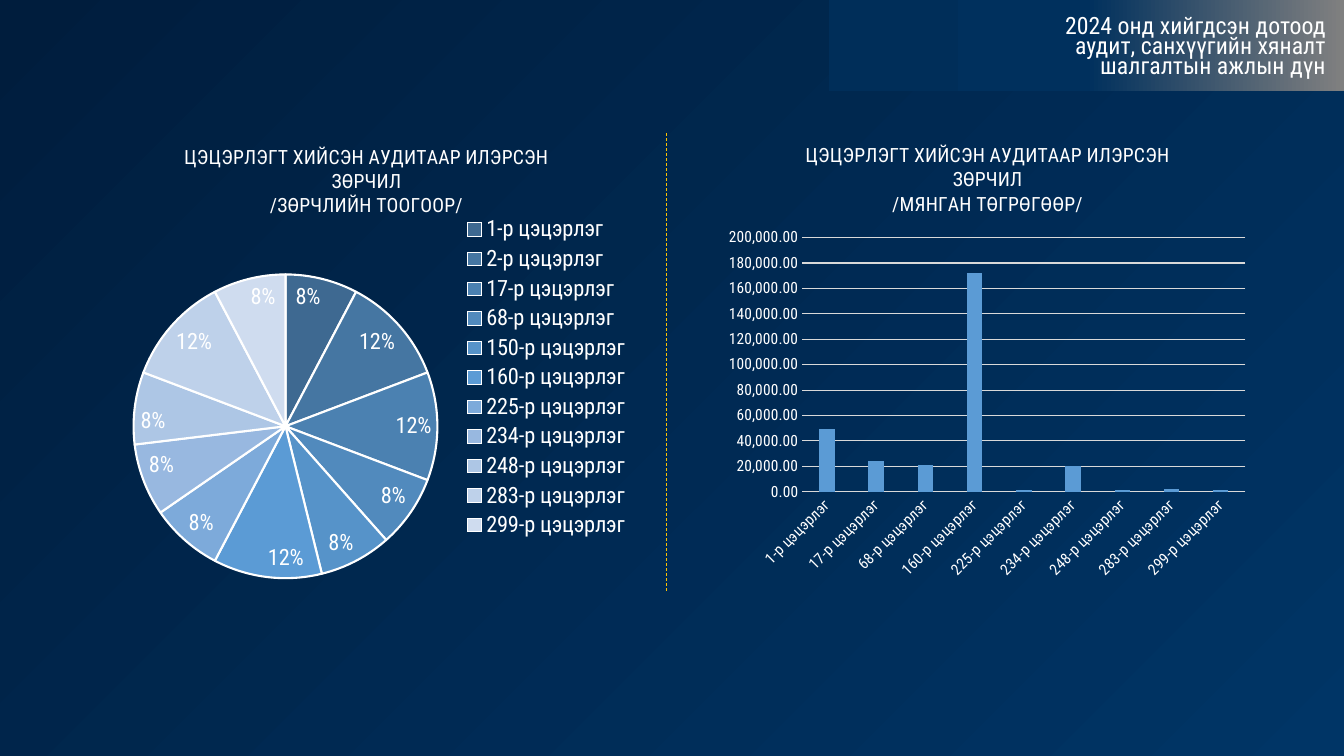
"""Builds the slide on the 2024 internal audit results for kindergartens."""
from lxml import etree
from pptx import Presentation
from pptx.chart.data import CategoryChartData
from pptx.dml.color import RGBColor
from pptx.enum.chart import XL_CHART_TYPE as ChartType
from pptx.enum.chart import XL_LABEL_POSITION as LabelPosition
from pptx.enum.chart import XL_LEGEND_POSITION as LegendPosition
from pptx.enum.chart import XL_TICK_MARK as TickMark
from pptx.enum.dml import MSO_LINE as LineStyle
from pptx.enum.shapes import MSO_CONNECTOR as Connector
from pptx.enum.shapes import MSO_SHAPE as Shape
from pptx.enum.text import MSO_ANCHOR as Anchor
from pptx.enum.text import MSO_AUTO_SIZE as AutoSize
from pptx.enum.text import PP_ALIGN as Align
from pptx.oxml import parse_xml
from pptx.oxml.ns import nsdecls, qn
from pptx.util import Inches, Pt

FONT = "Roboto Condensed"
WHITE = RGBColor(0xFF, 0xFF, 0xFF)
GOLD = RGBColor(0xFF, 0xC3, 0x00)
GRID = RGBColor(0xD9, 0xD9, 0xD9)
BLUE = RGBColor(0x5B, 0x9B, 0xD5)
SLICE_COLOURS = [RGBColor.from_string(value) for value in (
    "3E6991", "4576A2", "4B81B1", "518ABD", "5693C9", "5B9BD5",
    "7DAADA", "98B8E0", "ADC6E5", "BED1EA", "CFDCEF")]


def style_font(font, size):
    font.name = FONT
    font.size = Pt(size)
    font.bold = False
    font.color.rgb = WHITE


def place_part(element, index, inner, **fractions):
    for old_layout in element.findall(qn("c:layout")):
        element.remove(old_layout)
    target = '<c:layoutTarget val="inner"/>' if inner else ""
    modes = "".join(f'<c:{key}Mode val="edge"/>' for key in "xy")
    sizes = "".join(f'<c:{key} val="{value}"/>' for key, value in fractions.items())
    element.insert(index, parse_xml(
        f'<c:layout {nsdecls("c")}><c:manualLayout>{target}{modes}{sizes}'
        '</c:manualLayout></c:layout>'))


presentation = Presentation()
presentation.slide_width = Inches(13.33)
presentation.slide_height = Inches(7.5)
slide = presentation.slides.add_slide(presentation.slide_layouts[5])

RADIAL = ('<a:path path="circle"><a:fillToRect l="100000" t="100000"/></a:path>')
LINEAR = '<a:lin ang="0" scaled="0"/>'
panels = [
    ((0, 0, 13.33, 7.58), [(0, "003566"), (100, "001D3D")], RADIAL),
    ((8.22, 0, 5.11, 0.9), [(0, "002E59"), (50, "00305D"), (100, "808080")], LINEAR),
]
for box, stops, direction in panels:
    panel = slide.shapes.add_shape(Shape.RECTANGLE, *map(Inches, box))
    panel.shadow.inherit = False
    panel.line.fill.background()
    stop_xml = "".join(
        f'<a:gs pos="{position * 1000}"><a:srgbClr val="{colour}"/></a:gs>'
        for position, colour in stops)
    geometry = panel._element.spPr.find(qn("a:prstGeom"))
    geometry.addnext(parse_xml(
        f'<a:gradFill {nsdecls("a")} rotWithShape="1"><a:gsLst>{stop_xml}</a:gsLst>'
        f'{direction}</a:gradFill>'))

divider = slide.shapes.add_connector(
    Connector.STRAIGHT, Inches(6.61), Inches(5.86), Inches(6.61), Inches(1.3))
divider.line.color.rgb = GOLD
divider.line.width = Pt(0.5)
divider.line.dash_style = LineStyle.DASH
etree.SubElement(divider._element.spPr, qn("a:effectLst"))

violations = {1: 8, 2: 12, 17: 12, 68: 8, 150: 8, 160: 12,
              225: 8, 234: 8, 248: 8, 283: 12, 299: 8}
amounts = {1: 49000, 17: 24000, 68: 21000, 160: 172000, 225: 1000,
           234: 20000, 248: 1000, 283: 2000, 299: 1000}
chart_specs = [
    (ChartType.PIE, (0.87, 1.19, 5.45, 5.11), violations, "/ЗӨРЧЛИЙН ТООГООР/",
     {"x": 0.17, "y": 0.04}, {"x": 0.08, "y": 0.3, "w": 0.56, "h": 0.59}),
    (ChartType.COLUMN_CLUSTERED, (7.1, 1.19, 5.36, 4.67), amounts, "/МЯНГАН ТӨГРӨГӨӨР/",
     {"x": 0.16, "y": 0.04}, {"x": 0.16, "y": 0.25, "w": 0.82, "h": 0.54}),
]
charts = []
for kind, box, values, measure, title_place, plot_place in chart_specs:
    data = CategoryChartData(number_format="#,##0.00")
    data.categories = [f"{number}-р цэцэрлэг" for number in values]
    data.add_series("Series 1", list(values.values()))
    chart = slide.shapes.add_chart(kind, *map(Inches, box), data).chart
    style_font(chart.font, 11)
    chart.has_legend = False
    chart.has_title = True
    title_frame = chart.chart_title.text_frame
    lines = ["ЦЭЦЭРЛЭГТ ХИЙСЭН АУДИТААР ИЛЭРСЭН", "ЗӨРЧИЛ", measure]
    for index, line in enumerate(lines):
        paragraph = title_frame.add_paragraph() if index else title_frame.paragraphs[0]
        paragraph.alignment = Align.CENTER
        run = paragraph.add_run()
        run.text = line
        style_font(run.font, 14)
    place_part(chart.chart_title._element, 1, False, **title_place)
    place_part(chart._chartSpace.chart.plotArea, 0, True, **plot_place)
    charts.append(chart)
pie_chart, column_chart = charts

pie_chart.has_legend = True
legend = pie_chart.legend
legend.position = LegendPosition.RIGHT
legend.include_in_layout = False
style_font(legend.font, 16)
place_part(legend._element, 1, False, x=0.68, y=0.18, w=0.31, h=0.64)
pie = pie_chart.plots[0]
pie.vary_by_categories = True
for index, colour in enumerate(SLICE_COLOURS):
    slice_format = pie.series[0].points[index].format
    slice_format.fill.solid()
    slice_format.fill.fore_color.rgb = colour
    slice_format.line.color.rgb = WHITE
    slice_format.line.width = Pt(1.5)
pie.has_data_labels = True
labels = pie.data_labels
labels.show_percentage = True
labels.show_value = False
labels.number_format = "0%"
labels.number_format_is_linked = False
labels.position = LabelPosition.INSIDE_END
style_font(labels.font, 16)

columns = column_chart.plots[0]
columns.vary_by_categories = False
columns.gap_width = 219
columns.overlap = -27
columns.series[0].format.fill.solid()
columns.series[0].format.fill.fore_color.rgb = BLUE
category_axis, value_axis = column_chart.category_axis, column_chart.value_axis
for axis in (category_axis, value_axis):
    axis.major_tick_mark = TickMark.NONE
    axis.minor_tick_mark = TickMark.NONE
    style_font(axis.tick_labels.font, 11)
category_axis.format.line.color.rgb = GRID
category_axis.format.line.width = Pt(0.75)
category_axis._element.find(qn("c:txPr")).find(qn("a:bodyPr")).set("rot", "-2700000")
value_axis.format.line.fill.background()
value_axis.minimum_scale = 0
value_axis.maximum_scale = 200000
value_axis.major_unit = 20000
value_axis.tick_labels.number_format = "#,##0.00"
value_axis.tick_labels.number_format_is_linked = False
value_axis.has_major_gridlines = True
value_axis.major_gridlines.format.line.color.rgb = GRID
value_axis.major_gridlines.format.line.width = Pt(0.75)

title = slide.shapes.title
title.left, title.top, title.width, title.height = map(Inches, (10.23, 0.13, 3.02, 0.7))
title_frame = title.text_frame
title_frame.word_wrap = True
title_frame.auto_size = AutoSize.NONE
title_frame.vertical_anchor = Anchor.MIDDLE
paragraph = title_frame.paragraphs[0]
paragraph.alignment = Align.RIGHT
paragraph.line_spacing = 0.7
run = paragraph.add_run()
run.text = "2024 онд хийгдсэн дотоод аудит, санхүүгийн хяналт шалгалтын ажлын дүн"
style_font(run.font, 17)
title._element.getparent().append(title._element)

presentation.save("out.pptx")
